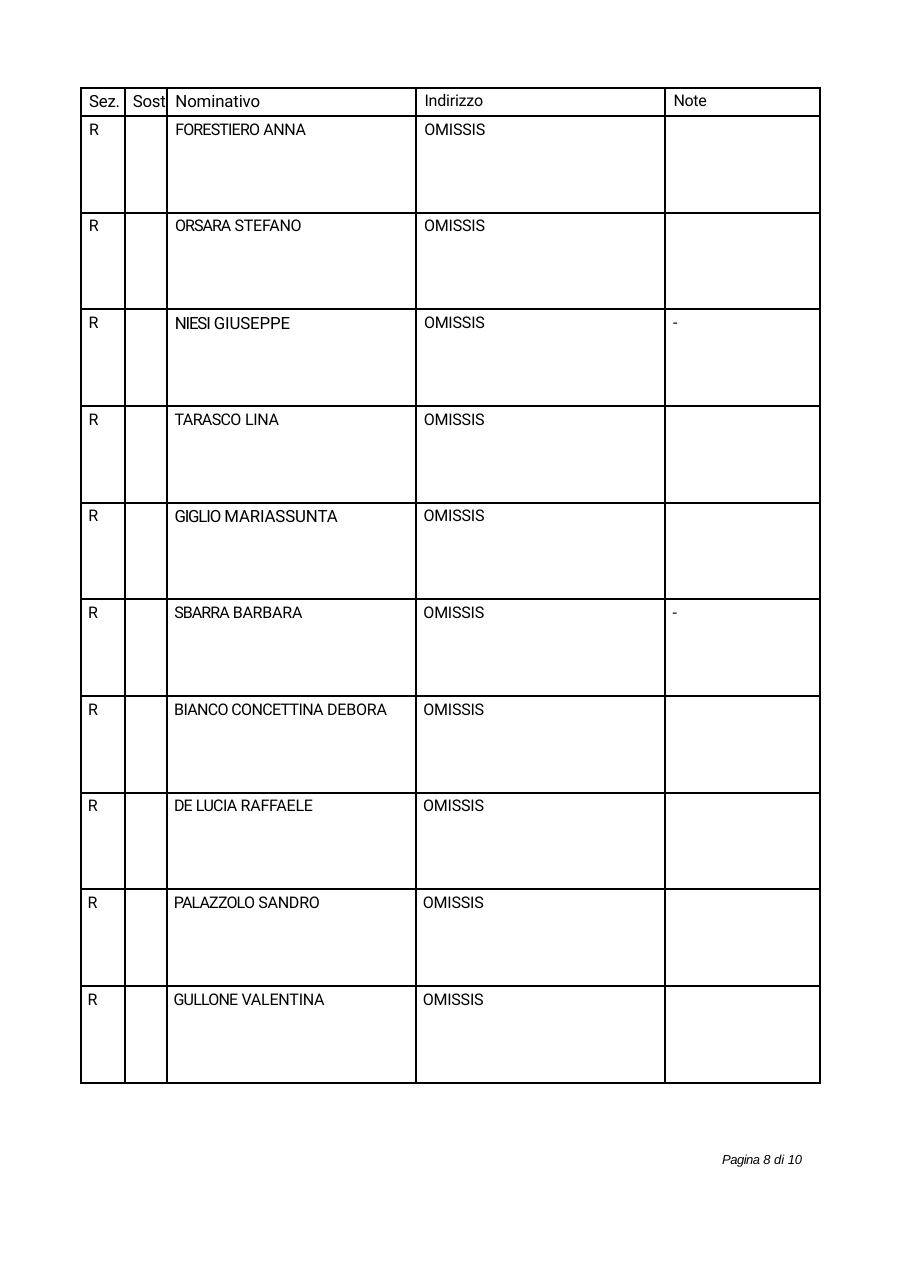
from lxml import etree
from pptx import Presentation
from pptx import util as u
from pptx.dml import color
from pptx.enum import text
from pptx.oxml import ns

HEADS = [("Sez.", -0.2, 11), ("Sost", -0.2, 11), ("Nominativo", -0.1, 11),
         ("Indirizzo", -0.1, 10.5), ("Note", -0.2, 10.5)]
PEOPLE = [
    ([("FORESTIERO ", -0.5), ("ANNA", -0.2)], 10.5, ""),
    ([("ORSARA ", -0.6), ("STEFANO", -0.1)], 10.5, ""),
    ([("NIESI ", -0.8), ("GIUSEPPE", -0.1)], 11, "-"),
    ([("TARASCO", -0.4), (" LINA", -0.2)], 10.5, ""),
    ([("GIGLIO ", -0.8), ("MARIASSUNTA", -0.1)], 11, ""),
    ([("SBARRA ", -0.6), ("BARBARA", -0.1)], 10.5, "-"),
    ([("BIANCO CONCETTINA ", -0.4), ("DEBORA", -0.1)], 10.5, ""),
    ([("DE ", -0.5), ("LUCIA ", -0.4), ("RAFFAELE", -0.1)], 10.5, ""),
    ([("PALAZZOLO ", -0.5), ("SANDRO", -0.1)], 10.5, ""),
    ([("GULLONE ", -0.5), ("VALENTINA", -0.1)], 10.5, ""),
]
WIDTHS = [1.01, 0.98, 5.75, 5.75, 3.57]
HEAD_H, ROW_H = 0.65, 2.23


def paint(code):
    return color.RGBColor.from_string(code)


def write(frame, runs, size=10.5, face="Roboto", ink="000000", italic=False):
    para = frame.paragraphs[0]
    para.alignment = text.PP_ALIGN.LEFT
    for words, gap in runs:
        run = para.add_run()
        run.text = words
        run.font.size = u.Pt(size)
        run.font.name = face
        run.font.italic = italic
        run.font.color.rgb = paint(ink)
        run._r.get_or_add_rPr().set("spc", str(round(gap * 100)))


def frame_cell(cell, ink="000000", width=1.5):
    props = cell._tc.get_or_add_tcPr()
    for side in ("lnL", "lnR", "lnT", "lnB"):
        line = etree.SubElement(props, ns.qn(f"a:{side}"), w=str(u.Pt(width)))
        fill = etree.SubElement(line, ns.qn("a:solidFill"))
        etree.SubElement(fill, ns.qn("a:srgbClr"), val=ink)
    cell.fill.background()


def add_list(slide, left, top):
    rows = [[([(words, gap)], size) for words, gap, size in HEADS]]
    for name, size, note in PEOPLE:
        rows.append([([("R", -0.5)], 10.5), ([], 10.5), (name, size),
                     ([("OMISSIS", -0.1)], 10.5),
                     ([(note, -0.5)] if note else [], 10.5)])
    high = HEAD_H + ROW_H * len(PEOPLE)
    table = slide.shapes.add_table(len(rows), len(WIDTHS), u.Cm(left), u.Cm(top),
                                   u.Cm(sum(WIDTHS)), u.Cm(high)).table
    table.horz_banding = False
    for col, wide in zip(table.columns, WIDTHS):
        col.width = u.Cm(wide)
    for i, row in enumerate(rows):
        table.rows[i].height = u.Cm(ROW_H if i else HEAD_H)
        for j, (runs, size) in enumerate(row):
            cell = table.cell(i, j)
            cell.margin_left = u.Cm(0.19 - 0.004 * i)
            cell.margin_top = u.Cm(0.1 if i else 0.08)
            cell.margin_right = cell.margin_bottom = 0
            frame_cell(cell)
            write(cell.text_frame, runs, size)


def add_foot(slide, left, top, wide, high):
    box = slide.shapes.add_textbox(u.Cm(left), u.Cm(top), u.Cm(wide), u.Cm(high))
    frame = box.text_frame
    frame.word_wrap = False
    frame.margin_left = frame.margin_right = frame.margin_bottom = 0
    frame.margin_top = u.Cm(0.03)
    write(frame, [("Pagina ", -0.3), ("8 di ", 0), ("10", -0.2)],
          size=8.5, face="Arial", italic=True)


def main():
    deck = Presentation()
    deck.slide_width, deck.slide_height = u.Cm(21.03), u.Cm(29.72)
    slide = deck.slides.add_slide(deck.slide_layouts[6])
    add_list(slide, 1.87, 2.03)
    add_foot(slide, 16.67, 26.54, 1.93, 0.43)
    deck.save("out.pptx")


if __name__ == "__main__":
    main()
